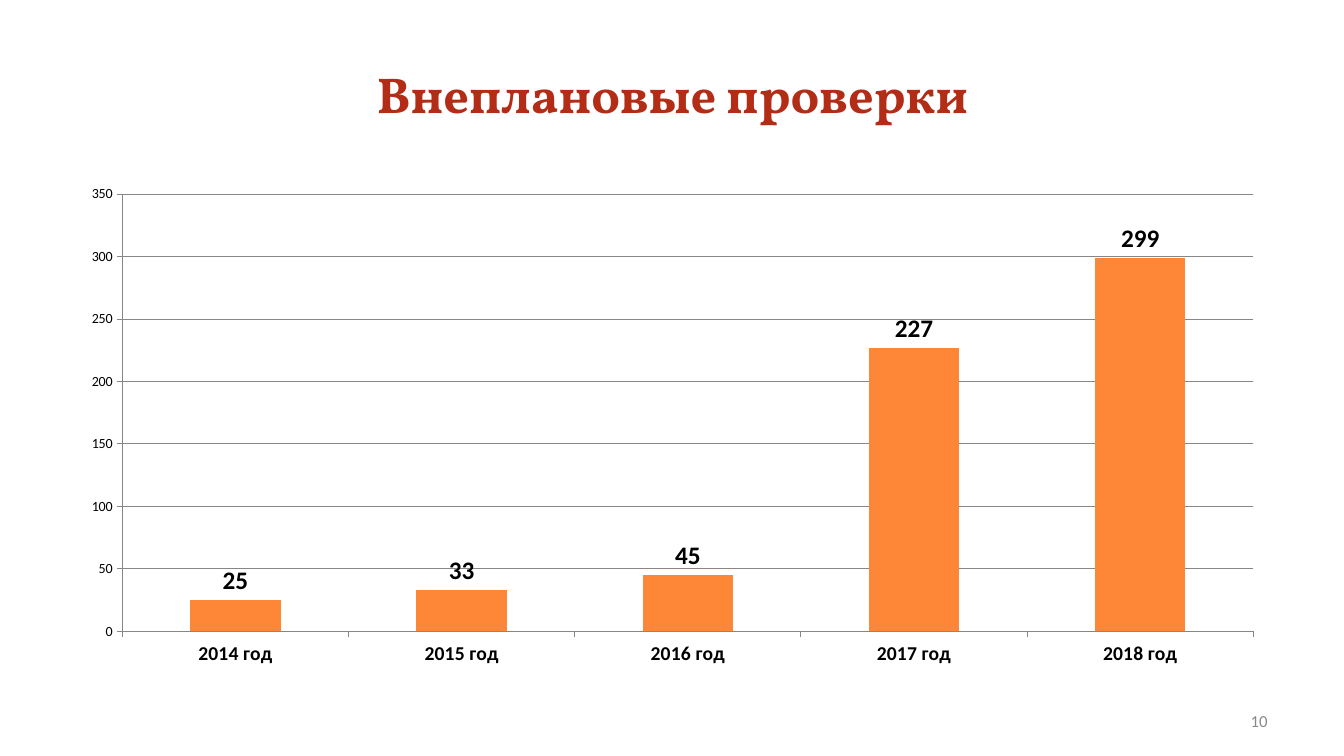
from pptx import Presentation
from pptx import util as u
from pptx.chart.data import CategoryChartData
from pptx.dml.color import RGBColor
from pptx.enum import chart as charts, text

COLORS = {
    "title": "B32C16",
    "bar": "FE8637",
    "ink": "000000",
    "line": "878787",
    "number": "898989",
}


class SlideBuilder:
    body_font = "Calibri"
    title_font = "Vollkorn"

    def __init__(self, slide):
        self.slide = slide

    def color(self, name):
        return RGBColor.from_string(COLORS[name])

    def style(self, font, size, color, bold=False, name=None):
        font.name = name or self.body_font
        font.size = u.Pt(size)
        font.bold = bold
        font.color.rgb = self.color(color)

    def text(self, content, box, align, size, color, bold=False, name=None):
        frame = self.slide.shapes.add_textbox(*map(u.Inches, box)).text_frame
        frame.word_wrap = True
        frame.vertical_anchor = text.MSO_ANCHOR.MIDDLE
        paragraph = frame.paragraphs[0]
        paragraph.text = content
        paragraph.alignment = align
        self.style(paragraph.font, size, color, bold, name)

    def line(self, line):
        line.color.rgb = self.color("line")
        line.width = u.Pt(0.75)

    def column_chart(self, categories, series_name, values, box):
        data = CategoryChartData()
        data.categories = categories
        data.add_series(series_name, values)
        chart = self.slide.shapes.add_chart(
            charts.XL_CHART_TYPE.COLUMN_CLUSTERED, *map(u.Inches, box), data
        ).chart
        chart.has_legend = False
        chart.has_title = False
        self.style(chart.font, 10, "ink")

        # Axes and gridlines
        years, counts = chart.category_axis, chart.value_axis
        for axis in (years, counts):
            axis.major_tick_mark = charts.XL_TICK_MARK.OUTSIDE
            axis.minor_tick_mark = charts.XL_TICK_MARK.NONE
            self.line(axis.format.line)
        self.style(years.tick_labels.font, 14, "ink", bold=True)
        counts.minimum_scale, counts.maximum_scale = 0, 350
        counts.major_unit = 50
        counts.has_major_gridlines = True
        self.line(counts.major_gridlines.format.line)

        # Bars and their values
        plot = chart.plots[0]
        plot.gap_width = 150
        plot.vary_by_categories = False
        bars = plot.series[0]
        bars.format.fill.solid()
        bars.format.fill.fore_color.rgb = self.color("bar")
        labels = bars.data_labels
        labels.show_value = True
        labels.position = charts.XL_LABEL_POSITION.OUTSIDE_END
        self.style(labels.font, 18, "ink", bold=True)


def main():
    deck = Presentation()
    deck.slide_width, deck.slide_height = u.Inches(13.33), u.Inches(7.5)
    builder = SlideBuilder(deck.slides.add_slide(deck.slide_layouts[6]))

    # Title
    builder.text("Внеплановые проверки", (0.67, 0.3, 12, 1.25),
                 text.PP_ALIGN.CENTER, 36, "title", True, builder.title_font)

    # Inspections per year
    inspections = {2014: 25, 2015: 33, 2016: 45, 2017: 227, 2018: 299}
    builder.column_chart([f"{year} год" for year in inspections], "Series 1",
                         list(inspections.values()), (0.67, 1.75, 12, 4.95))

    # Slide number
    builder.text("10", (9.56, 6.95, 3.11, 0.4),
                 text.PP_ALIGN.RIGHT, 12, "number")

    deck.save("out.pptx")


if __name__ == "__main__":
    main()
